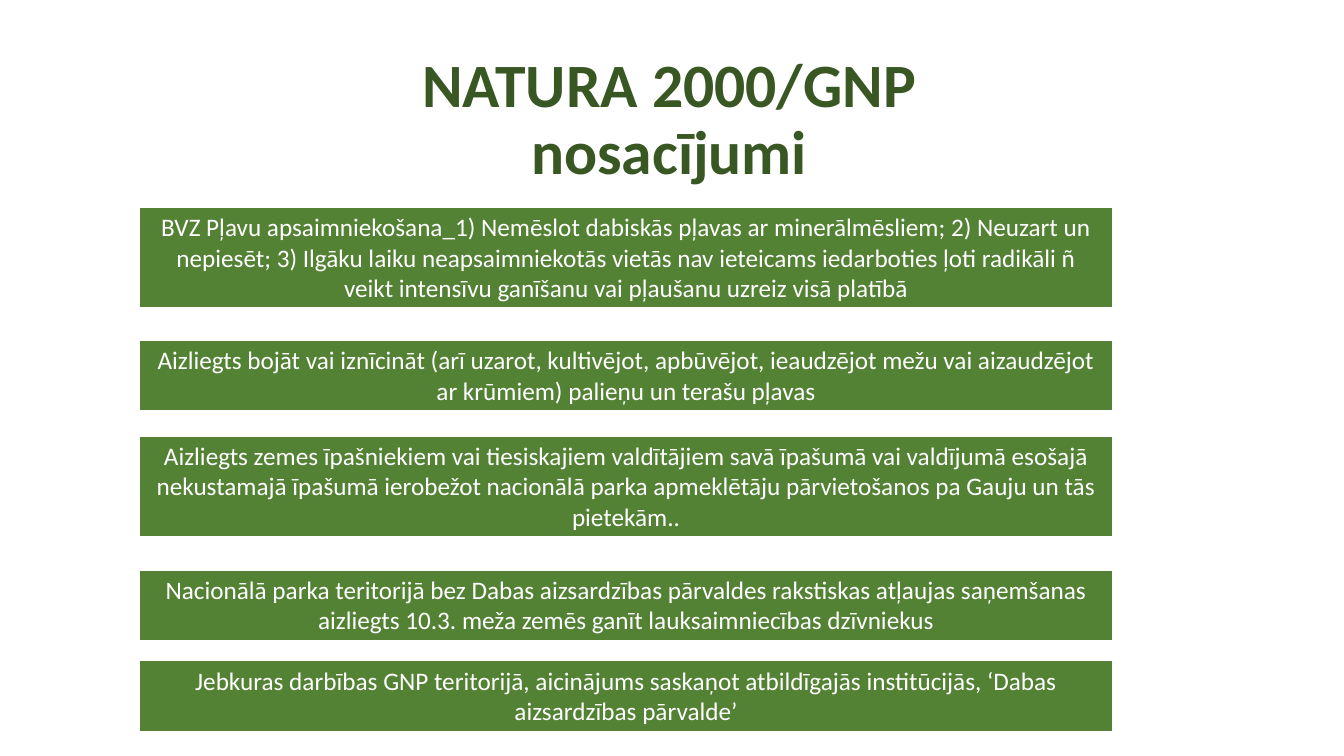
from dataclasses import dataclass

from pptx import Presentation
from pptx.dml.color import RGBColor
from pptx.enum.shapes import MSO_SHAPE
from pptx.enum.text import MSO_ANCHOR, MSO_AUTO_SIZE, PP_ALIGN
from pptx.slide import Slide
from pptx.util import Emu, Pt

EMU_PER_PX = 9144
FONT = "Calibri"
DARK_GREEN = "385723"
GREEN = "548235"
WHITE = "FFFFFF"
RULE_LEFT, RULE_WIDTH = 138, 966


@dataclass(frozen=True)
class Rule:
    """A land-use condition shown as a green band."""

    top: int
    height: int
    wording: str


HEADING = ("NATURA 2000/GNP", "nosacījumi")
RULES = (
    Rule(205, 101, "BVZ Pļavu apsaimniekošana_1) Nemēslot dabiskās pļavas ar minerālmēsliem; "
         "2) Neuzart un nepiesēt; 3) Ilgāku laiku neapsaimniekotās vietās nav ieteicams iedarboties "
         "ļoti radikāli ñ veikt intensīvu ganīšanu vai pļaušanu uzreiz visā platībā"),
    Rule(337, 71, "Aizliegts bojāt vai iznīcināt (arī uzarot, kultivējot, apbūvējot, ieaudzējot mežu "
         "vai aizaudzējot ar krūmiem) palieņu un terašu pļavas"),
    Rule(432, 101, "Aizliegts zemes īpašniekiem vai tiesiskajiem valdītājiem savā īpašumā vai valdījumā "
         "esošajā nekustamajā īpašumā ierobežot nacionālā parka apmeklētāju pārvietošanos pa Gauju "
         "un tās pietekām.."),
    Rule(565, 71, "Nacionālā parka teritorijā bez Dabas aizsardzības pārvaldes rakstiskas atļaujas "
         "saņemšanas aizliegts 10.3. meža zemēs ganīt lauksaimniecības dzīvniekus"),
    Rule(655, 71, "Jebkuras darbības GNP teritorijā, aicinājums saskaņot atbildīgajās institūcijās, "
         "‘Dabas aizsardzības pārvalde’"),
)


def px(length: int) -> Emu:
    """Convert px to EMU."""
    return Emu(length * EMU_PER_PX)


def color(value: str) -> RGBColor:
    """Convert a hex string to a colour."""
    return RGBColor.from_string(value)


def write_line(paragraph, wording: str, size: int, ink: str, bold: bool = False) -> None:
    """Add one centred run to a paragraph."""
    paragraph.alignment = PP_ALIGN.CENTER
    run = paragraph.add_run()
    run.text = wording
    run.font.name = FONT
    run.font.size = Pt(size)
    run.font.bold = bold
    run.font.color.rgb = color(ink)


def draw_heading(slide: Slide) -> None:
    """Draw the two-line heading, resting on the bottom of its box."""
    frame = slide.shapes.add_textbox(px(278), px(119), px(772), px(67)).text_frame
    frame.word_wrap = True
    frame.vertical_anchor = MSO_ANCHOR.BOTTOM
    frame.margin_left = frame.margin_right = frame.margin_top = frame.margin_bottom = 0
    for index, wording in enumerate(HEADING):
        paragraph = frame.add_paragraph() if index else frame.paragraphs[0]
        paragraph.line_spacing = 0.9
        write_line(paragraph, wording, 44, DARK_GREEN, bold=True)


def draw_rule(slide: Slide, rule: Rule) -> None:
    """Draw one condition as a green band."""
    band = slide.shapes.add_shape(
        MSO_SHAPE.RECTANGLE, px(RULE_LEFT), px(rule.top), px(RULE_WIDTH), px(rule.height))
    band.shadow.inherit = False
    band.fill.solid()
    band.fill.fore_color.rgb = color(GREEN)
    band.line.color.rgb = color(WHITE)
    band.line.width = Pt(1.5)
    frame = band.text_frame
    frame.word_wrap = True
    frame.auto_size = MSO_AUTO_SIZE.SHAPE_TO_FIT_TEXT
    frame.vertical_anchor = MSO_ANCHOR.TOP
    write_line(frame.paragraphs[0], rule.wording, 18, WHITE)


def main() -> None:
    """Build and save the slide."""
    deck = Presentation()
    deck.slide_width, deck.slide_height = px(1333), px(750)
    slide = deck.slides.add_slide(deck.slide_layouts[6])
    draw_heading(slide)
    for rule in RULES:
        draw_rule(slide, rule)
    deck.save("out.pptx")


if __name__ == "__main__":
    main()
